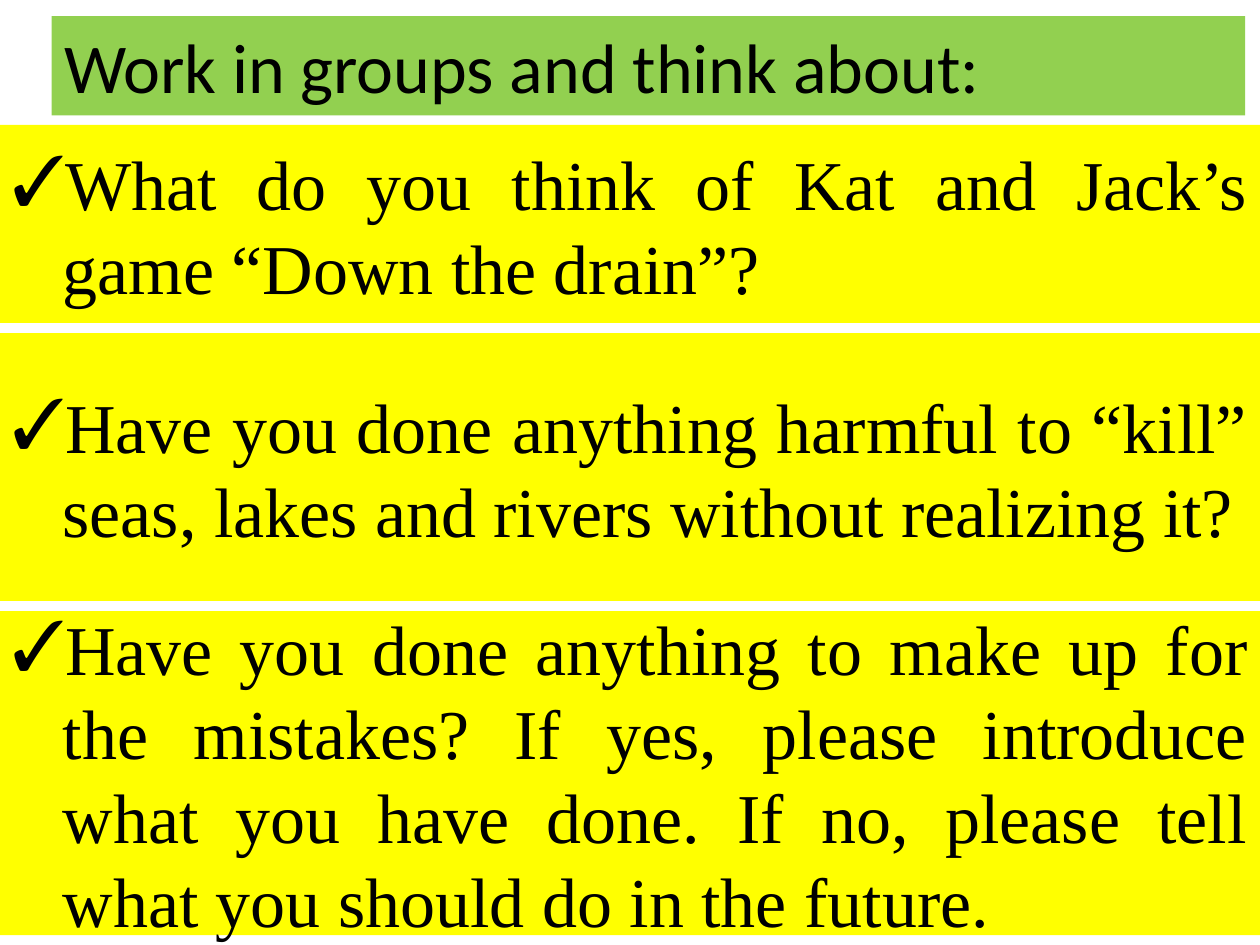
from lxml.etree import SubElement
from pptx import Presentation
from pptx.dml.color import RGBColor
from pptx.enum.shapes import MSO_SHAPE
from pptx.enum.text import MSO_ANCHOR, PP_ALIGN
from pptx.oxml.ns import qn
from pptx.util import Pt


def color(hex_value):
    return RGBColor.from_string(hex_value)


def write_text(box, text, font, size=40, ink="000000", align=PP_ALIGN.LEFT,
               bullet=None, indent=0):
    frame = box.text_frame
    frame.word_wrap = True
    frame.vertical_anchor = MSO_ANCHOR.MIDDLE
    para = frame.paragraphs[0]
    para.alignment = align
    span = para.add_run()
    span.text = text
    span.font.name = font
    span.font.size = Pt(size)
    span.font.color.rgb = color(ink)
    if bullet:
        properties = para._p.get_or_add_pPr()
        properties.set("marL", str(Pt(indent)))
        properties.set("indent", str(-Pt(indent)))
        SubElement(properties, qn("a:buFont"), typeface=font)
        SubElement(properties, qn("a:buChar"), char=bullet)


class SlideBuilder:
    title_fill = "92D050"
    question_fill = "FFFF00"
    title_font = "Calibri"
    question_font = "Times New Roman"

    def __init__(self, slide):
        self.slide = slide

    def band(self, left, top, width, height, fill):
        box = self.slide.shapes.add_shape(
            MSO_SHAPE.RECTANGLE, Pt(left), Pt(top), Pt(width), Pt(height))
        box.shadow.inherit = False
        box.fill.solid()
        box.fill.fore_color.rgb = color(fill)
        box.line.fill.background()
        return box

    def title(self, text, left, top, width, height):
        box = self.band(left, top, width, height, self.title_fill)
        write_text(box, text, self.title_font)

    def question(self, text, top, height):
        box = self.band(0, top, 720, height, self.question_fill)
        write_text(box, text, self.question_font, align=PP_ALIGN.JUSTIFY,
                   bullet="✓", indent=28.8)


def main():
    deck = Presentation()
    deck.slide_width, deck.slide_height = Pt(720), Pt(540)
    page = SlideBuilder(deck.slides.add_slide(deck.slide_layouts[6]))

    # Heading
    page.title("Work in groups and think about:", 29.5, 9.3, 682, 56.7)

    # Discussion questions, stacked with equal gaps
    questions = [
        ("What do you think of Kat and Jack’s game “Down the drain”?", 113.2),
        ("Have you done anything harmful to “kill” seas, lakes and rivers "
         "without realizing it?", 153),
        ("Have you done anything to make up for the mistakes? If yes, please "
         "introduce what you have done. If no, please tell what you should do "
         "in the future.", 185.2),
    ]
    top, gap = 71.4, 5.8
    for text, height in questions:
        page.question(text, top, height)
        top += height + gap

    deck.save("out.pptx")


if __name__ == "__main__":
    main()
